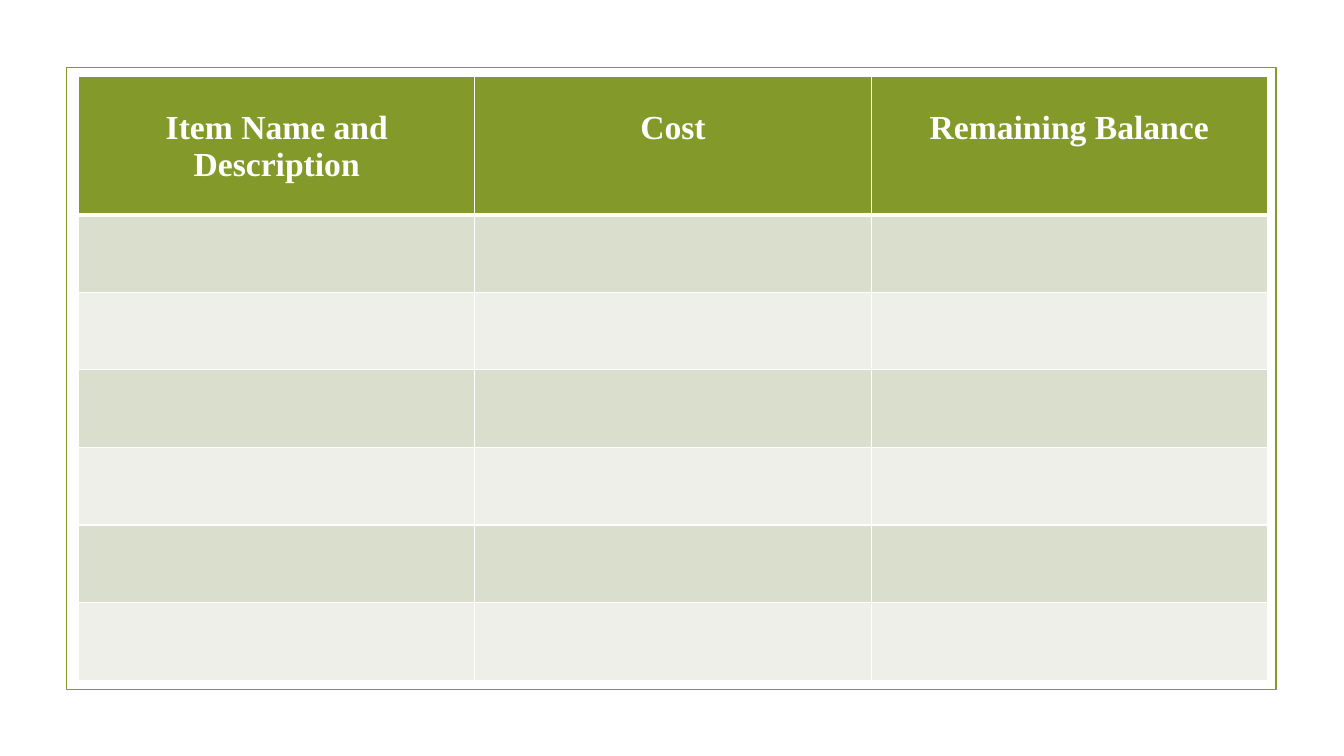
from pptx import Presentation
from pptx.dml.color import RGBColor
from pptx.enum.shapes import MSO_SHAPE
from pptx.enum.text import PP_ALIGN
from pptx.oxml import parse_xml
from pptx.oxml.ns import nsdecls
from pptx.util import Pt

PX = 9144
COLORS = {"green": "83992A", "dark": "D9DECD", "light": "EDEFE8", "white": "FFFFFF"}
HEADS = ["Item Name and Description", "Cost", "Remaining Balance"]
WIDTH = 393
HEIGHTS = [137] + [77] * 6


def color(name):
    return RGBColor.from_string(COLORS[name])


class Deck:
    font = "Times New Roman"
    size = 24

    def __init__(self):
        self.file = Presentation()
        self.file.slide_width = 1333 * PX
        self.file.slide_height = 750 * PX
        self.slide = self.file.slides.add_slide(self.file.slide_layouts[6])

    def frame(self, *box):
        shape = self.slide.shapes.add_shape(MSO_SHAPE.RECTANGLE, *[n * PX for n in box])
        shape.shadow.inherit = False
        shape.fill.background()
        shape.line.color.rgb = color("green")
        shape.line.width = Pt(1.25)

    def edge(self, cell, side, width):
        cell._tc.get_or_add_tcPr().append(parse_xml(
            f'<a:ln{side} {nsdecls("a")} w="{Pt(width)}"><a:solidFill>'
            f'<a:srgbClr val="{COLORS["white"]}"/></a:solidFill></a:ln{side}>'))

    def head(self, cell, text):
        cell.margin_top = 33 * PX
        cell.text_frame.text = text
        para = cell.text_frame.paragraphs[0]
        para.alignment = PP_ALIGN.CENTER
        font = para.runs[0].font
        font.name = self.font
        font.size = Pt(self.size)
        font.bold = True
        font.color.rgb = color("white")

    def table(self, left, top, heads, width, heights):
        box = [left, top, width * len(heads), sum(heights)]
        grid = self.slide.shapes.add_table(
            len(heights), len(heads), *[n * PX for n in box]).table
        for col in grid.columns:
            col.width = width * PX
        for i, row in enumerate(grid.rows):
            row.height = heights[i] * PX
            fill = "green" if i == 0 else "dark" if i % 2 else "light"
            for cell in row.cells:
                for side in "LRTB":
                    thick = (i, side) in [(0, "B"), (1, "T")]
                    self.edge(cell, side, 3 if thick else 1)
                cell.fill.solid()
                cell.fill.fore_color.rgb = color(fill)
        for cell, text in zip(grid.rows[0].cells, heads):
            self.head(cell, text)


def main():
    deck = Deck()
    deck.frame(66, 67, 1200, 617)
    deck.table(78, 76, HEADS, WIDTH, HEIGHTS)
    deck.file.save("out.pptx")


if __name__ == "__main__":
    main()
